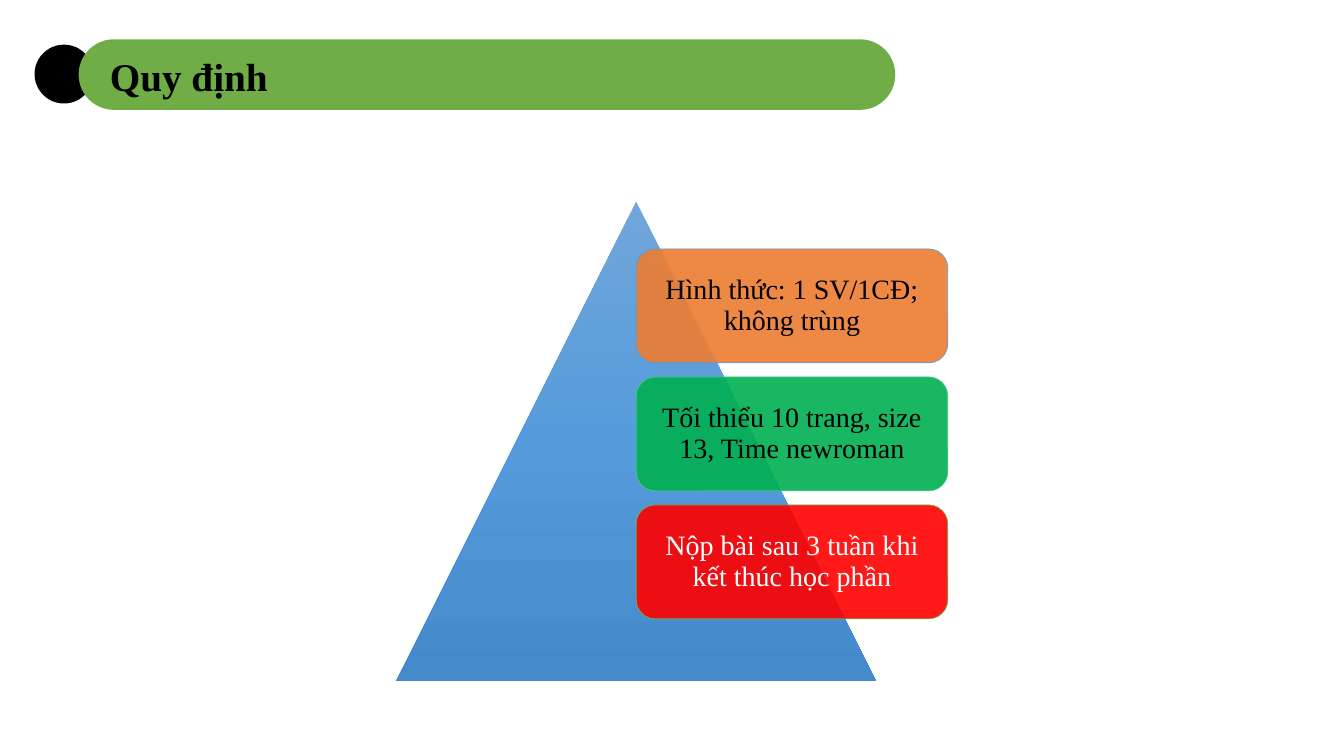
from copy import deepcopy

from lxml import etree
from pptx import Presentation
from pptx.dml.color import RGBColor
from pptx.enum import shapes, text
from pptx.oxml.ns import qn
from pptx.util import Inches, Pt

FONT = "Times New Roman"
BLACK = RGBColor(0x00, 0x00, 0x00)
WHITE = RGBColor(0xFF, 0xFF, 0xFF)
GREEN = RGBColor(0x70, 0xAD, 0x47)
BLUE = RGBColor(0x5B, 0x9B, 0xD5)
ORANGE = RGBColor(0xED, 0x7D, 0x31)
EMERALD = RGBColor(0x00, 0xB0, 0x50)
MINT = RGBColor(0x4D, 0xC5, 0x8D)
RED = RGBColor(0xFF, 0x00, 0x00)
PYRAMID_STOPS = [
    (0, RGBColor(0x71, 0xA6, 0xDB)),
    (0.5, RGBColor(0x55, 0x9B, 0xDB)),
    (1, RGBColor(0x44, 0x8A, 0xCA)),
]
RULES = [
    ("Hình thức: 1 SV/1CĐ; không trùng", ORANGE, BLUE, BLACK),
    ("Tối thiểu 10 trang, size 13, Time newroman", EMERALD, MINT, BLACK),
    ("Nộp bài sau 3 tuần khi kết thúc học phần", RED, GREEN, WHITE),
]
CARD_TOP, CARD_STEP = 2.47, 1.27


def set_all(obj, values):
    for name, value in values.items():
        setattr(obj, name, value)


def add_shape(s, kind, box, fill=None, line=None, width=1):
    sp = s.shapes.add_shape(kind, *map(Inches, box))
    sp.shadow.inherit = False
    if fill is not None:
        sp.fill.solid()
        sp.fill.fore_color.rgb = fill
    if line is None:
        sp.line.fill.background()
    else:
        sp.line.color.rgb = line
        sp.line.width = Pt(width)
    return sp


def add_pyramid(s):
    sp = add_shape(s, shapes.MSO_SHAPE.ISOSCELES_TRIANGLE, (3.93, 2, 4.76, 4.76))
    sp.fill.gradient()
    sp.fill.gradient_angle = 270
    stop_list = sp._element.spPr.find(qn("a:gradFill")).find(qn("a:gsLst"))
    stop_list.insert(1, deepcopy(stop_list[0]))
    for stop, (position, color) in zip(sp.fill.gradient_stops, PYRAMID_STOPS):
        stop.color.rgb = color
        stop.position = position


def write(tf, words, frame, paragraph, font, color):
    set_all(tf, frame)
    p = tf.paragraphs[0]
    set_all(p, paragraph)
    r = p.add_run()
    r.text = words
    set_all(r.font, {"name": FONT, **font})
    r.font.color.rgb = color


def add_card(s, top, words, fill, line, color):
    sp = add_shape(s, shapes.MSO_SHAPE.ROUNDED_RECTANGLE,
                   (6.31, top, 3.09, 1.13), fill, line, 0.5)
    rgb = sp._element.spPr.find(qn("a:solidFill"))[0]
    etree.SubElement(rgb, qn("a:alpha"), val="90000")
    margins = {f"margin_{side}": Inches(0.08)
               for side in ("left", "top", "right", "bottom")}
    write(sp.text_frame, words,
          {"word_wrap": True, "vertical_anchor": text.MSO_ANCHOR.MIDDLE, **margins},
          {"alignment": text.PP_ALIGN.CENTER, "line_spacing": 0.9},
          {"size": Pt(20)}, color)


def add_title(s):
    add_shape(s, shapes.MSO_SHAPE.OVAL, (0.35, 0.45, 0.57, 0.57), BLACK, BLACK)
    bar = add_shape(s, shapes.MSO_SHAPE.ROUNDED_RECTANGLE, (0.78, 0.39, 8.1, 0.7), GREEN)
    bar.adjustments[0] = 0.5
    title = s.shapes.title
    set_all(title, {"left": Inches(0.99), "top": Inches(0.47),
                    "width": Inches(7.48), "height": Inches(0.57)})
    write(title.text_frame, "Quy định",
          {"word_wrap": True, "auto_size": text.MSO_AUTO_SIZE.NONE,
           "vertical_anchor": text.MSO_ANCHOR.TOP},
          {"alignment": text.PP_ALIGN.LEFT},
          {"size": Pt(28), "bold": True}, BLACK)
    bar._element.addnext(title._element)


def main():
    prs = Presentation()
    set_all(prs, {"slide_width": Inches(13.33), "slide_height": Inches(7.5)})
    s = prs.slides.add_slide(prs.slide_layouts[5])
    add_pyramid(s)
    for i, rule in enumerate(RULES):
        add_card(s, CARD_TOP + i * CARD_STEP, *rule)
    add_title(s)
    prs.save("out.pptx")


if __name__ == "__main__":
    main()
